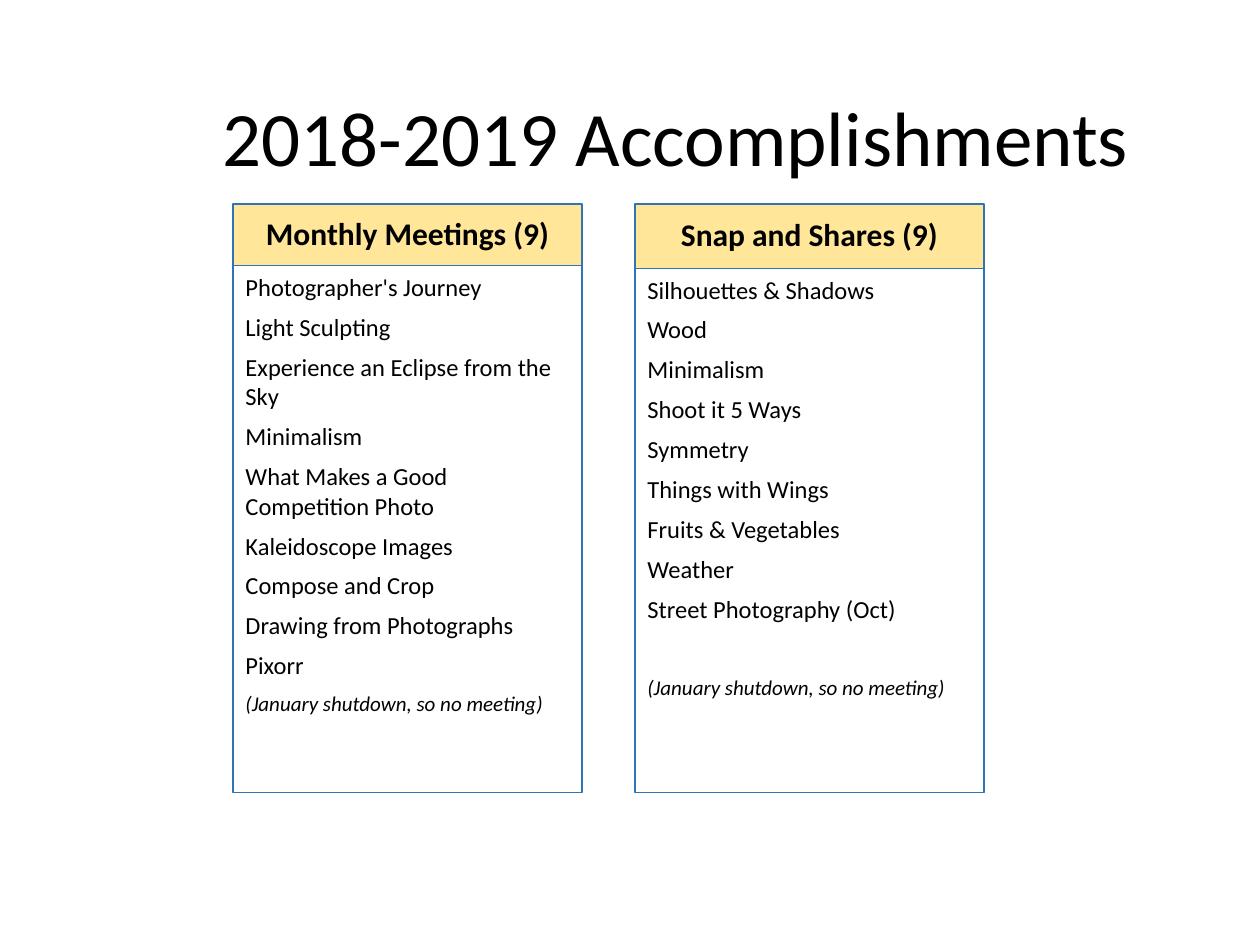
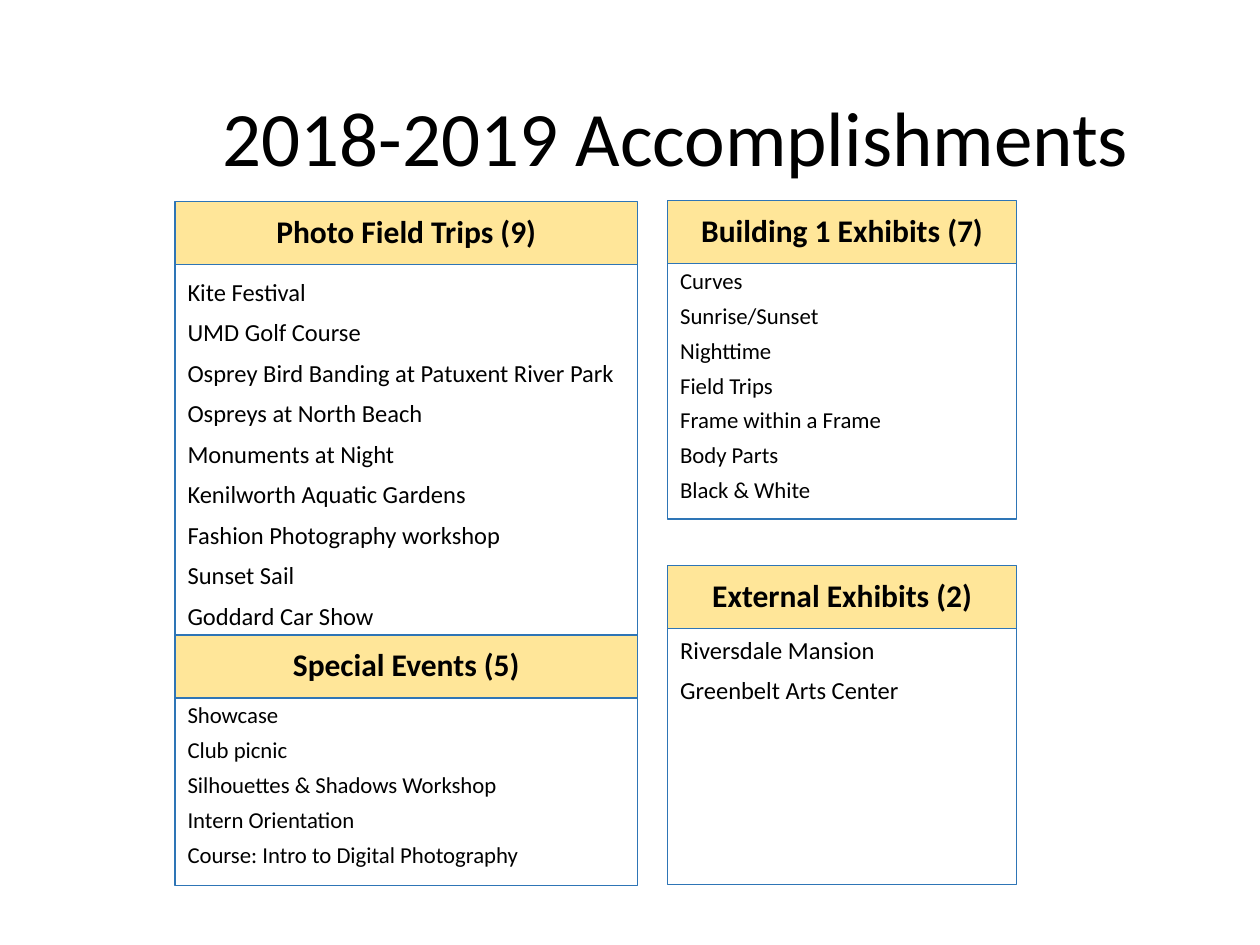
"""Build two slides listing a photo club's 2018-2019 accomplishments."""
from dataclasses import dataclass

from pptx import Presentation
from pptx import util as u
from pptx.dml.color import RGBColor
from pptx.enum import shapes, text


@dataclass(frozen=True)
class Theme:
    font: str = "Calibri"
    ink: RGBColor = RGBColor(0x00, 0x00, 0x00)
    band: RGBColor = RGBColor(0xFF, 0xE6, 0x99)
    border: RGBColor = RGBColor(0x2E, 0x75, 0xB6)
    title: float = 44
    heading: float = 18
    item: float = 14
    small_item: float = 12.95
    note: float = 12
    narrow: float = 2.77
    wide: float = 3.67


theme = Theme()
NOTE = "(January shutdown, so no meeting)"

# Item style: size, line spacing, space before
REGULAR = (theme.item, 1.0, 3)
AIRY = (theme.item, 1.2, 0)
COMPACT = (theme.small_item, 0.9, 3)

# Panel: heading, (left, top, width, band height, bottom), item style, items, space before note
pages = [
    [
        ("Monthly Meetings (9)", (1.85, 1.62, theme.narrow, 0.49, 6.29), REGULAR,
         ["Photographer's Journey", "Light Sculpting", "Experience an Eclipse from the Sky",
          "Minimalism", "What Makes a Good Competition Photo", "Kaleidoscope Images",
          "Compose and Crop", "Drawing from Photographs", "Pixorr"], 3),
        ("Snap and Shares (9)", (5.04, 1.62, theme.narrow, 0.51, 6.29), REGULAR,
         ["Silhouettes & Shadows", "Wood", "Minimalism", "Shoot it 5 Ways", "Symmetry",
          "Things with Wings", "Fruits & Vegetables", "Weather",
          "Street Photography (Oct)"], 26),
    ],
    [
        ("Photo Field Trips (9)", (1.39, 1.6, theme.wide, 0.5, 5.04), AIRY,
         ["Kite Festival", "UMD Golf Course", "Osprey Bird Banding at Patuxent River Park",
          "Ospreys at North Beach", "Monuments at Night", "Kenilworth Aquatic Gardens",
          "Fashion Photography workshop", "Sunset Sail", "Goddard Car Show"], None),
        ("Building 1 Exhibits (7)", (5.3, 1.59, theme.narrow, 0.5, 4.12), COMPACT,
         ["Curves", "Sunrise/Sunset", "Nighttime", "Field Trips", "Frame within a Frame",
          "Body Parts", "Black & White"], None),
        ("Special Events (5)", (1.39, 5.04, theme.wide, 0.5, 7.03), COMPACT,
         ["Showcase", "Club picnic", "Silhouettes & Shadows Workshop", "Intern Orientation",
          "Course: Intro to Digital Photography"], None),
        ("External Exhibits (2)", (5.3, 4.49, theme.narrow, 0.5, 7.02), REGULAR,
         ["Riversdale Mansion", "Greenbelt Arts Center"], None),
    ],
]


def add_panel_box(page, left, top, width, height, anchor):
    box = page.shapes.add_shape(shapes.MSO_SHAPE.RECTANGLE, u.Inches(left), u.Inches(top),
                                u.Inches(width), u.Inches(height))
    box.shadow.inherit = False
    box.fill.background()
    box.line.color.rgb = theme.border
    box.line.width = u.Pt(0.75)
    box.text_frame.word_wrap = True
    box.text_frame.vertical_anchor = anchor
    return box


def style_paragraph(para, size, spacing, align=text.PP_ALIGN.LEFT, bold=False, italic=False):
    para.alignment = align
    para.line_spacing = spacing
    for span in para.runs:
        span.font.name = theme.font
        span.font.size = u.Pt(size)
        span.font.color.rgb = theme.ink
        span.font.bold = bold
        span.font.italic = italic


deck = Presentation()
deck.slide_width, deck.slide_height = u.Inches(10), u.Inches(7.5)

for panels in pages:
    page = deck.slides.add_slide(deck.slide_layouts[6])
    title = page.shapes.add_textbox(u.Inches(1.67), u.Inches(0.4), u.Inches(7.64), u.Inches(1.45))
    title.text_frame.word_wrap = True
    title.text_frame.vertical_anchor = text.MSO_ANCHOR.MIDDLE
    title.text_frame.text = "2018-2019 Accomplishments"
    style_paragraph(title.text_frame.paragraphs[0], theme.title, 0.9)

    for heading, (left, top, width, band, bottom), style, items, note_gap in panels:
        header = add_panel_box(page, left, top, width, band, text.MSO_ANCHOR.MIDDLE)
        header.fill.solid()
        header.fill.fore_color.rgb = theme.band
        header.text_frame.text = heading
        style_paragraph(header.text_frame.paragraphs[0], theme.heading, 0.9,
                        text.PP_ALIGN.CENTER, bold=True)

        size, spacing, before = style
        body = add_panel_box(page, left, top + band, width, bottom - top - band,
                             text.MSO_ANCHOR.TOP)
        has_note = note_gap is not None
        body.text_frame.text = "\n".join(items + [NOTE] * has_note)
        for index, para in enumerate(body.text_frame.paragraphs):
            style_paragraph(para, size, spacing)
            para.space_before = u.Pt(before if index else 0)
            para.space_after = u.Pt(3)
        if has_note:
            style_paragraph(para, theme.note, spacing, italic=True)
            para.space_before = u.Pt(note_gap)

deck.save("out.pptx")
